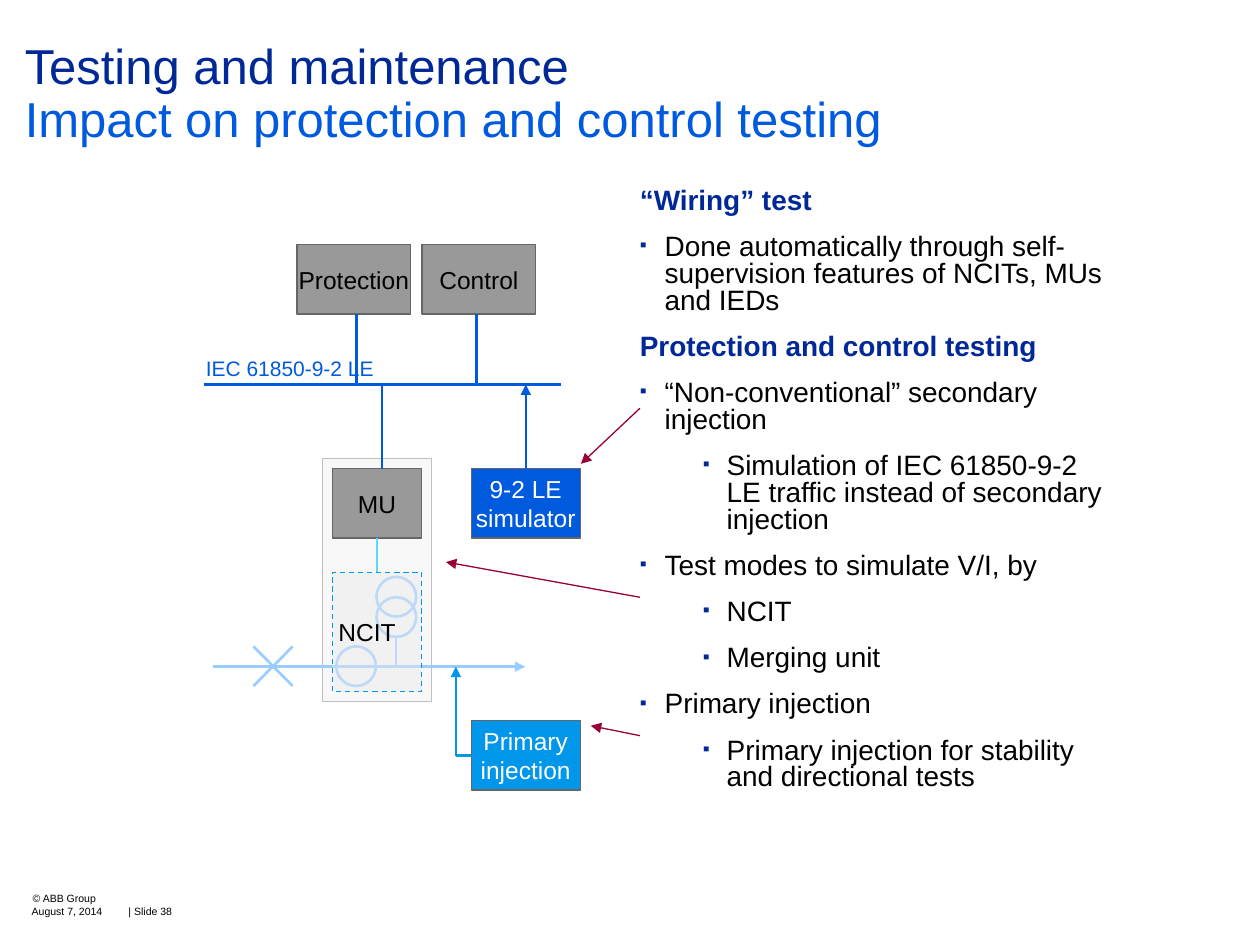
from lxml.etree import SubElement
from pptx import Presentation
from pptx.dml.color import RGBColor
from pptx.enum.dml import MSO_LINE
from pptx.enum.shapes import MSO_CONNECTOR, MSO_SHAPE
from pptx.enum.text import MSO_ANCHOR, PP_ALIGN
from pptx.oxml.ns import qn
from pptx.util import Cm, Pt

COLOURS = {
    "navy": "002897", "blue": "005ADE", "azure": "0096EA", "cyan": "5BD8FF",
    "pale": "99CCFF", "wine": "990033", "grey": "999999", "edge": "666666",
    "frame": "F8F8F8", "frame_edge": "C0C0C0", "mist": "EAEAEA",
    "black": "000000", "white": "FFFFFF",
}
TOP, LEFT, BOTTOM = 0, 1, 2

BODY = [
    ("heading", "“Wiring” test"),
    ("bullet", "Done automatically through self-supervision features of NCITs, MUs and IEDs"),
    ("heading", "Protection and control testing"),
    ("bullet", "“Non-conventional” secondary injection"),
    ("sub", "Simulation of IEC 61850-9-2 LE traffic instead of secondary injection"),
    ("bullet", "Test modes to simulate V/I, by"),
    ("sub", "NCIT"),
    ("sub", "Merging unit"),
    ("bullet", "Primary injection"),
    ("sub", "Primary injection for stability and directional tests"),
]


def rgb(name):
    return RGBColor.from_string(COLOURS[name])


def style_font(font, size, colour, bold=False):
    font.name, font.size, font.bold = "Arial", Pt(size), bold
    font.color.rgb = rgb(colour)


def add_text_box(page, left, top, width, height, insets=(0, 0, 0, 0), wrap=True):
    box = page.shapes.add_textbox(Cm(left), Cm(top), Cm(width), Cm(height))
    frame = box.text_frame
    frame.word_wrap = wrap
    (frame.margin_left, frame.margin_top,
     frame.margin_right, frame.margin_bottom) = map(Cm, insets)
    return frame


def add_label(page, text, size, colour, *place, **options):
    para = add_text_box(page, *place, **options).paragraphs[0]
    para.text = text
    style_font(para.font, size, colour)


def add_bullet(para):
    properties = para._p.get_or_add_pPr()
    colour = SubElement(properties, qn("a:buClr"))
    SubElement(colour, qn("a:srgbClr"), val=COLOURS["navy"])
    SubElement(properties, qn("a:buSzPct"), val="70000")
    SubElement(properties, qn("a:buFont"), typeface="Arial")
    SubElement(properties, qn("a:buChar"), char="▪")


def add_title(page, left, top, width, height):
    frame = add_text_box(page, left, top, width, height, (0.5, 0.86, 0.6, 0))
    para = frame.paragraphs[0]
    para.line_spacing = 0.9
    first = para.add_run()
    first.text = "Testing and maintenance"
    para.add_line_break()
    second = para.add_run()
    second.text = "Impact on protection and control testing"
    for span, colour in ((first, "navy"), (second, "blue")):
        style_font(span.font, 28, colour)


def add_body(page, left, top, width, height):
    frame = add_text_box(page, left, top, width, height)
    for index, (kind, text) in enumerate(BODY):
        para = frame.add_paragraph() if index else frame.paragraphs[0]
        para.text = text
        para.line_spacing = 0.8
        para.space_before = Pt(11 if index else 0)
        para.level = int(kind == "sub")
        margin, indent = (1.75, -0.48) if kind == "sub" else (0.5, -0.5)
        properties = para._p.get_or_add_pPr()
        properties.set("marL", str(Cm(margin)))
        properties.set("indent", str(Cm(indent)))
        heading = kind == "heading"
        if not heading:
            add_bullet(para)
        style_font(para.font, 16, "navy" if heading else "black", heading)


def add_footer(page, left, top):
    add_label(page, "© ABB Group", 6, "black", left + 0.02, top, 3.5, 0.3)
    add_label(page, "August 7, 2014", 6, "black", left, top + 0.26, 1.65, 0.3)
    add_label(page, "| Slide 38", 6, "black", left + 1.95, top + 0.26, 1.25, 0.3)


def add_diagram(page, left, top):
    """Draw the substation test set-up, measured from its top left corner."""

    def outline(kind, x, y, width, height, fill, line, weight=0.75):
        shape = page.shapes.add_shape(
            kind, Cm(left + x), Cm(top + y), Cm(width), Cm(height))
        shape.shadow.inherit = False
        if fill:
            shape.fill.solid()
            shape.fill.fore_color.rgb = rgb(fill)
        else:
            shape.fill.background()
        shape.line.color.rgb = rgb(line)
        shape.line.width = Pt(weight)
        return shape

    def block(text, x, y, width, height, fill, colour, line="edge"):
        shape = outline(MSO_SHAPE.RECTANGLE, x, y, width, height, fill, line)
        frame = shape.text_frame
        frame.word_wrap = False
        frame.vertical_anchor = MSO_ANCHOR.MIDDLE
        frame.text = text
        for para in frame.paragraphs:
            para.alignment = PP_ALIGN.CENTER
            style_font(para.font, 14, colour)
        return shape

    def line(x1, y1, x2, y2, colour, weight=1.5, arrow=False):
        """Draw a line, with the arrowhead at its second end."""
        connector = page.shapes.add_connector(
            MSO_CONNECTOR.STRAIGHT, Cm(left + x1), Cm(top + y1),
            Cm(left + x2), Cm(top + y2))
        connector.line.color.rgb = rgb(colour)
        connector.line.width = Pt(weight)
        if arrow:
            SubElement(connector.line._get_or_add_ln(), qn("a:tailEnd"), type="triangle")
        SubElement(connector._element.spPr, qn("a:effectLst"))
        return connector

    bus, feeder, unit, high = 2.82, 8.51, 4.52, 1.4

    # Primary circuit with its breaker and instrument transformers
    outline(MSO_SHAPE.RECTANGLE, 2.6, 4.32, 2.2, 4.9, "frame", "frame_edge")
    line(0.39, feeder, 6.69, feeder, "pale", arrow=True)
    for x, y in ((2.88, 8.1), (3.69, 7.11), (3.69, 6.7)):
        outline(MSO_SHAPE.OVAL, x, y, 0.8, 0.8, None, "pale", 1.5)
    line(4.08, feeder, 4.08, 7.9, "pale")
    for start, end in ((8.1, 8.9), (8.9, 8.1)):
        line(1.21, start, 2, end, "pale")
    ncit = block("NCIT", 2.8, 6.61, 1.8, 2.4, "mist", "black", "azure")
    ncit.line.dash_style = MSO_LINE.DASH
    ncit.text_frame.margin_right = Cm(0.65)
    fill_colour = ncit._element.spPr.find(qn("a:solidFill"))[0]
    SubElement(fill_colour, qn("a:alpha"), val="45000")

    # Devices and the process bus
    merging_unit = block("MU", 2.8, unit, 1.8, high, "grey", "black")
    line(3.8, bus, 3.8, unit, "blue")
    block("Protection", 2.09, 0, 2.29, high, "grey", "black")
    add_label(page, "IEC 61850-9-2 LE", 12, "blue", left, top + 2.1, 3.9, 0.79,
              insets=(0.25, 0.13, 0.25, 0.13), wrap=False)
    line(0.21, bus, 7.4, bus, "blue")
    sensor_link = line(3.7, unit + high, 3.7, 6.61, "cyan")
    sensor_link.begin_connect(merging_unit, BOTTOM)
    sensor_link.end_connect(ncit, TOP)
    line(3.29, high, 3.29, bus, "blue")
    simulator = block("9-2 LE\nsimulator", 5.6, unit, 2.2, high, "blue", "white")
    line(6.7, unit, 6.7, bus, "blue", arrow=True).begin_connect(simulator, TOP)
    block("Control", 4.61, 0, 2.29, high, "grey", "black")
    line(5.7, high, 5.7, bus, "blue")

    # Primary injection
    injector = block("Primary\vinjection", 5.6, 9.6, 2.2, high, "azure", "white")
    line(5.29, 10.3, 5.6, 10.3, "azure").end_connect(injector, LEFT)
    line(5.29, 10.3, 5.29, feeder, "azure", arrow=True)

    # Pointers from the text to the parts it speaks of
    for start_y, tip_x, tip_y in ((3.3, 7.81, 4.42), (7.11, 5.09, 6.4), (9.9, 8.01, 9.7)):
        line(9, start_y, tip_x, tip_y, "wine", 0.75, arrow=True)


def main():
    deck = Presentation()
    deck.slide_width, deck.slide_height = Cm(25.4), Cm(19.05)
    page = deck.slides.add_slide(deck.slide_layouts[6])
    add_title(page, 0, 0, 25.4, 3.12)
    add_body(page, 12.9, 3.81, 9.6, 13.13)
    add_diagram(page, 3.9, 4.93)
    add_footer(page, 0.64, 17.98)
    deck.save("out.pptx")


if __name__ == "__main__":
    main()
